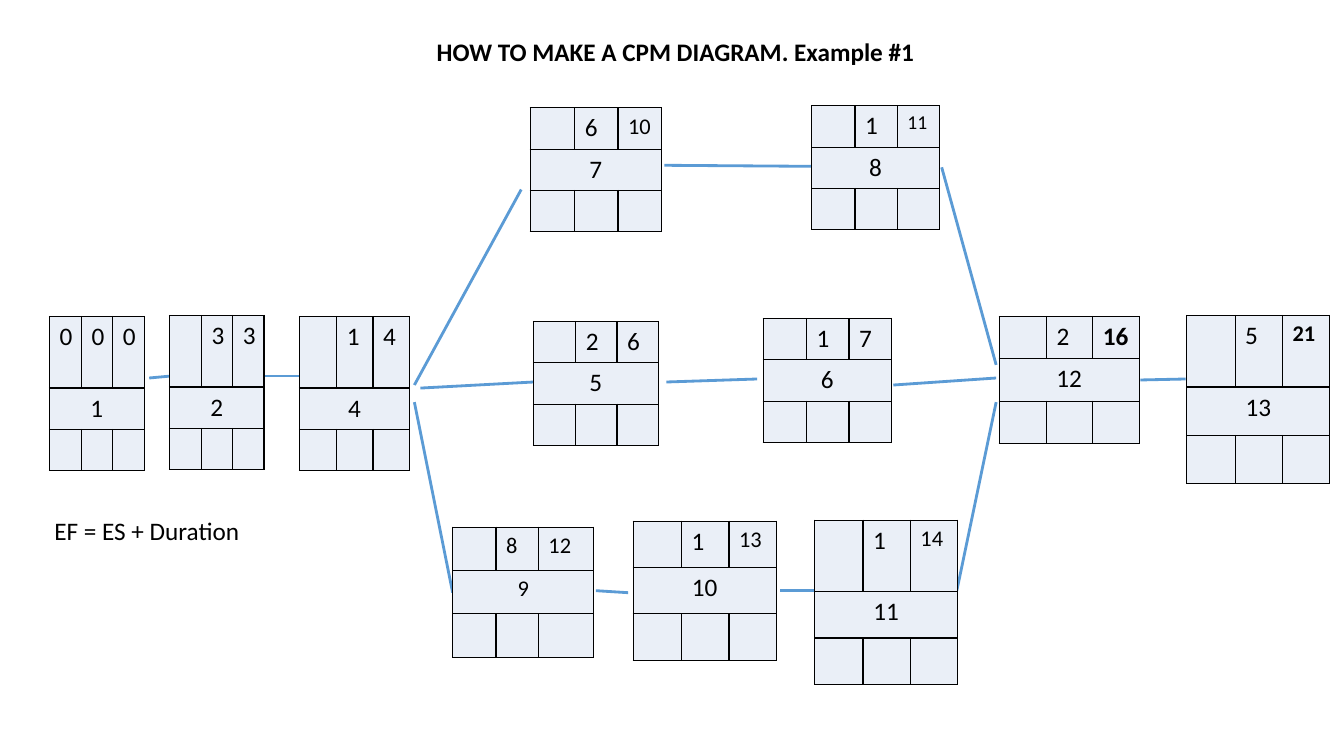
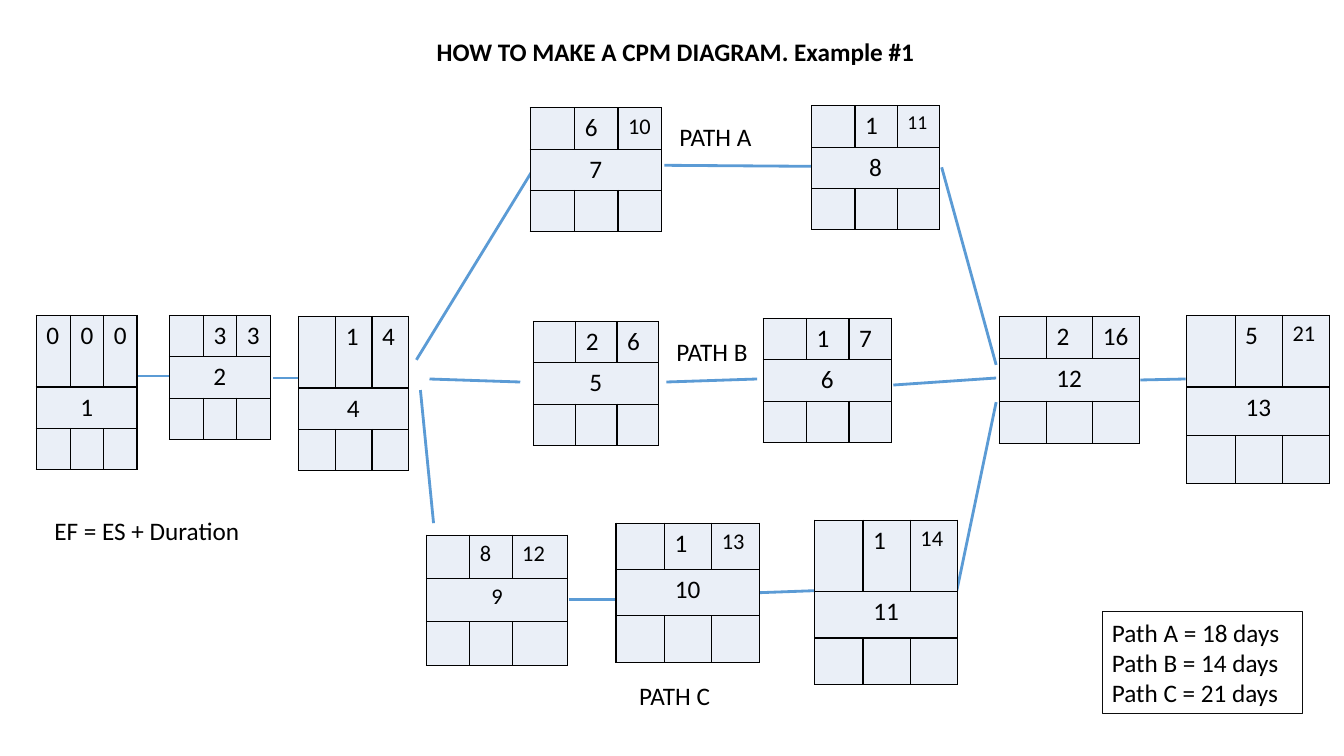
"""Build two critical path method diagrams."""
from dataclasses import dataclass, replace

from lxml.etree import SubElement
from pptx import Presentation
from pptx.dml.color import RGBColor
from pptx.enum.shapes import MSO_CONNECTOR, MSO_SHAPE
from pptx.enum.text import MSO_ANCHOR, PP_ALIGN
from pptx.oxml import parse_xml
from pptx.oxml.ns import nsdecls, qn
from pptx.util import Inches, Pt

COLORS = {"text": "000000", "border": "000000", "cell": "EAEFF7",
          "link": "5B9BD5", "frame": "0D0D0D"}
FONT = "Calibri"


@dataclass(frozen=True)
class Activity:
    """Place and values of one activity table."""
    left: float
    top: float
    column: float
    number: str
    duration: str
    finish: str
    start: str = ""
    row: float = 0.41
    first_row: float = 0.41
    last_column: float = 0
    size: int = 18
    finish_size: int = 18
    finish_bold: bool = False


SHARED_ACTIVITIES = {
    "5": Activity(5.29, 3.19, 0.41, "5", "2", "6"),
    "6": Activity(7.57, 3.16, 0.42, "6", "1", "7"),
    "7": Activity(5.26, 1.07, 0.43, "7", "6", "10", finish_size=16),
    "8": Activity(8.05, 1.05, 0.42, "8", "1", "11", finish_size=14),
    "9": Activity(4.49, 5.23, 0.42, "9", "8", "12", row=0.43, first_row=0.43,
                  last_column=0.55, size=16, finish_size=16),
    "10": Activity(6.28, 5.17, 0.47, "10", "1", "13", row=0.46, first_row=0.46,
                   finish_size=16),
    "11": Activity(8.08, 5.16, 0.47, "11", "1", "14", row=0.46, first_row=0.71,
                   finish_size=16),
    "12": Activity(9.91, 3.14, 0.46, "12", "2", "16", row=0.42, first_row=0.42),
    "13": Activity(11.77, 3.13, 0.47, "13", "5", "21", row=0.48, first_row=0.71,
                   finish_size=16),
}
FORWARD_ACTIVITIES = SHARED_ACTIVITIES | {
    "1": Activity(0.49, 3.14, 0.31, "1", "0", "0", "0", first_row=0.71),
    "2": Activity(1.68, 3.13, 0.31, "2", "3", "3", first_row=0.71),
    "4": Activity(2.97, 3.14, 0.36, "4", "1", "4", first_row=0.71),
    "12": replace(SHARED_ACTIVITIES["12"], finish_bold=True),
    "13": replace(SHARED_ACTIVITIES["13"], finish_bold=True),
}
PATH_ACTIVITIES = SHARED_ACTIVITIES | {
    "1": Activity(0.36, 3.13, 0.33, "1", "0", "0", "0", first_row=0.71),
    "2": Activity(1.68, 3.13, 0.33, "2", "3", "3"),
    "4": Activity(2.96, 3.14, 0.36, "4", "1", "4", first_row=0.71),
    "9": replace(SHARED_ACTIVITIES["9"], left=4.23, top=5.31),
    "10": replace(SHARED_ACTIVITIES["10"], left=6.11, top=5.19),
}
SHARED_LINKS = [
    (8.86, 3.82, 9.88, 3.75), (11.31, 3.77, 11.76, 3.76),
    (6.61, 3.79, 7.51, 3.76), (6.59, 1.64, 8.05, 1.65),
    (9.49, 5.86, 9.88, 3.99), (9.34, 1.66, 9.88, 3.62),
]
FORWARD_LINKS = SHARED_LINKS + [
    (1.48, 3.75, 1.7, 3.73), (2.62, 3.73, 2.97, 3.73),
    (4.17, 3.85, 5.29, 3.79), (5.91, 5.86, 6.23, 5.88),
    (7.74, 5.86, 8.08, 5.86), (4.11, 3.99, 4.49, 5.88),
    (4.11, 3.82, 5.17, 1.88),
]
PATH_LINKS = SHARED_LINKS + [
    (1.35, 3.73, 1.7, 3.73), (2.71, 3.75, 2.96, 3.75),
    (4.26, 3.76, 5.16, 3.79), (5.64, 5.95, 6.11, 5.95),
    (7.53, 5.88, 8.08, 5.86), (4.17, 3.87, 4.3, 5.19),
    (4.13, 3.57, 5.27, 1.71),
]
PATH_LABELS = [("PATH A", 6.64, 1.15), ("PATH B", 6.61, 3.29),
               ("PATH C", 6.24, 6.7)]
PATH_LENGTHS = ["Path A = 18 days", "Path B = 14 days", "Path C = 21 days"]


def color(name):
    """Return a named colour."""
    return RGBColor.from_string(COLORS[name])


def add_run(paragraph, text, size=18, bold=False):
    """Add one formatted run to a paragraph."""
    run = paragraph.add_run()
    run.text = text
    run.font.name = FONT
    run.font.size = Pt(size)
    run.font.bold = bold
    run.font.color.rgb = color("text")


def add_label(slide, text, left, top, width, height=0.4, wrap=True, bold=False):
    """Add a one-line text box and return its shape."""
    shape = slide.shapes.add_textbox(*map(Inches, (left, top, width, height)))
    shape.text_frame.word_wrap = wrap
    add_run(shape.text_frame.paragraphs[0], text, bold=bold)
    return shape


def add_title(slide):
    """Add the shared slide title."""
    shape = add_label(slide, "HOW TO MAKE A CPM DIAGRAM. Example #1",
                      1.7, 0.37, 10, 0.34, bold=True)
    shape.text_frame.vertical_anchor = MSO_ANCHOR.BOTTOM
    paragraph = shape.text_frame.paragraphs[0]
    paragraph.alignment = PP_ALIGN.CENTER
    paragraph.line_spacing = 0.9


def style_cell(cell):
    """Fill a cell and draw its four borders."""
    cell.fill.solid()
    cell.fill.fore_color.rgb = color("cell")
    properties = cell._tc.get_or_add_tcPr()
    for index, side in enumerate(("lnL", "lnR", "lnT", "lnB")):
        border = parse_xml(
            f'<a:{side} {nsdecls("a")} w="{Pt(1)}"><a:solidFill>'
            f'<a:srgbClr val="{COLORS["border"]}"/></a:solidFill></a:{side}>')
        properties.insert(index, border)


def add_activity(slide, activity):
    """Add one activity as a three-row table."""
    widths = [activity.column + 0.01, activity.column,
              activity.last_column or activity.column]
    heights = [activity.first_row, activity.row, activity.row]
    frame = slide.shapes.add_table(
        3, 3, Inches(activity.left), Inches(activity.top),
        Inches(sum(widths)), Inches(sum(heights)))
    table = frame.table
    table.first_row = table.horz_banding = False
    for column, width in zip(table.columns, widths):
        column.width = Inches(width)
    for row, height in zip(table.rows, heights):
        row.height = Inches(height)
    for cell in table.iter_cells():
        style_cell(cell)
    table.cell(1, 0).merge(table.cell(1, 2))
    values = [
        (0, 0, activity.start, activity.size, False),
        (0, 1, activity.duration, activity.size, False),
        (0, 2, activity.finish, activity.finish_size, activity.finish_bold),
        (1, 0, activity.number, activity.size, False),
    ]
    for row, column, text, size, bold in values:
        if text:
            paragraph = table.cell(row, column).text_frame.paragraphs[0]
            add_run(paragraph, text, size, bold)
    table.cell(1, 0).text_frame.paragraphs[0].alignment = PP_ALIGN.CENTER


def add_link(slide, ends):
    """Add a straight line between two points."""
    connector = slide.shapes.add_connector(
        MSO_CONNECTOR.STRAIGHT, *map(Inches, ends))
    connector.line.color.rgb = color("link")
    connector.line.width = Pt(2)
    SubElement(connector._element.spPr, qn("a:effectLst"))


def add_path_lengths(slide):
    """Add the framed list of path lengths."""
    shape = slide.shapes.add_shape(
        MSO_SHAPE.RECTANGLE, *map(Inches, (10.93, 6.07, 1.99, 1.01)))
    shape.shadow.inherit = False
    shape.fill.background()
    shape.line.color.rgb = color("frame")
    shape.line.width = Pt(0.75)
    text_frame = shape.text_frame
    text_frame.word_wrap = True
    text_frame.vertical_anchor = MSO_ANCHOR.TOP
    for index, text in enumerate(PATH_LENGTHS):
        paragraph = text_frame.add_paragraph() if index else text_frame.paragraphs[0]
        paragraph.alignment = PP_ALIGN.LEFT
        add_run(paragraph, text)


def add_diagram(presentation, activities, links):
    """Add a slide with the title, network and formula."""
    slide = presentation.slides.add_slide(presentation.slide_layouts[6])
    add_title(slide)
    for ends in links:
        add_link(slide, ends)
    for activity in activities.values():
        add_activity(slide, activity)
    add_label(slide, "EF = ES + Duration", 0.44, 5.06, 2.32)
    return slide


def main():
    """Build and save the presentation."""
    presentation = Presentation()
    presentation.slide_width = Inches(13.33)
    presentation.slide_height = Inches(7.5)
    add_diagram(presentation, FORWARD_ACTIVITIES, FORWARD_LINKS)
    slide = add_diagram(presentation, PATH_ACTIVITIES, PATH_LINKS)
    for text, left, top in PATH_LABELS:
        add_label(slide, text, left, top, 0.92, wrap=False)
    add_path_lengths(slide)
    presentation.save("out.pptx")


if __name__ == "__main__":
    main()
